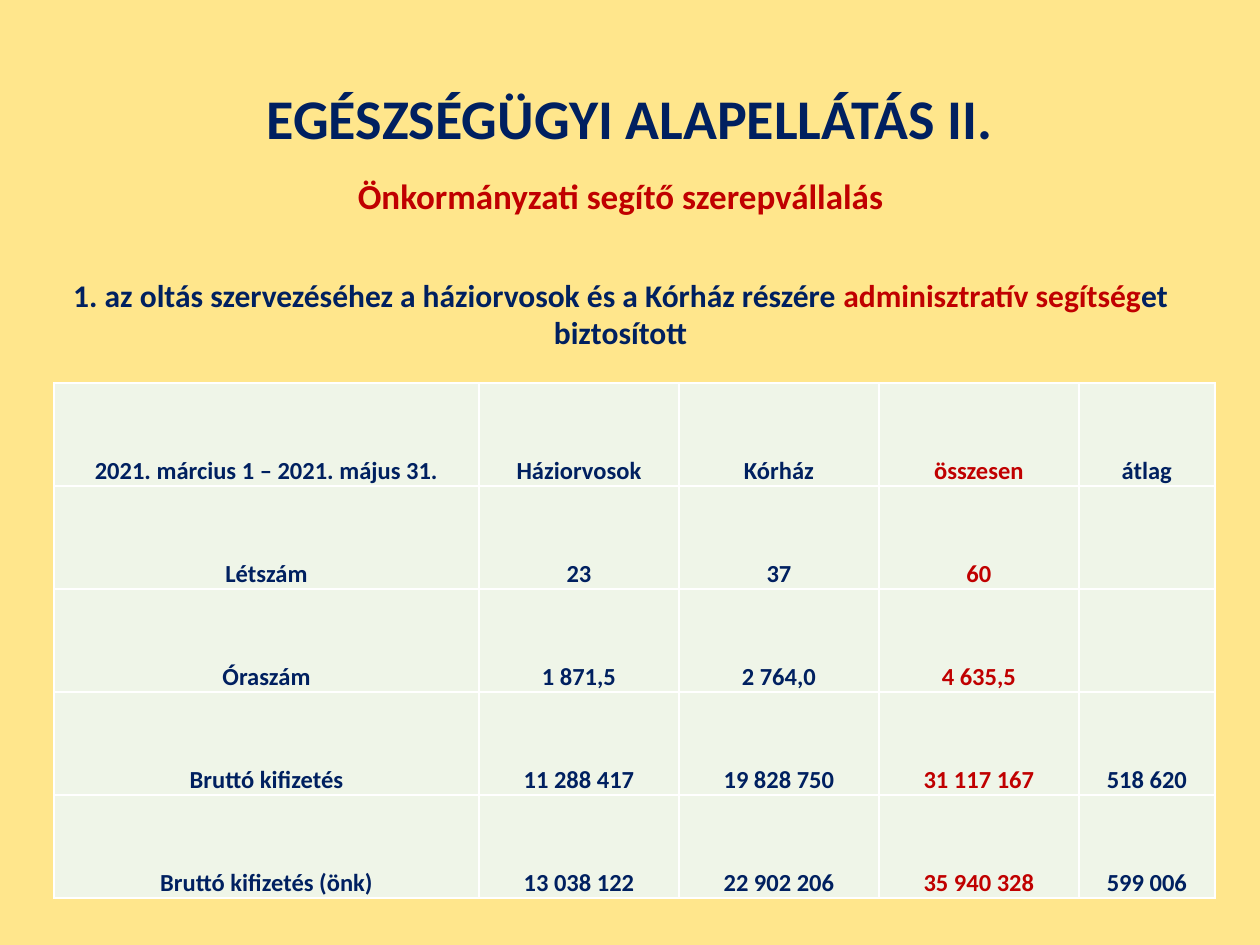
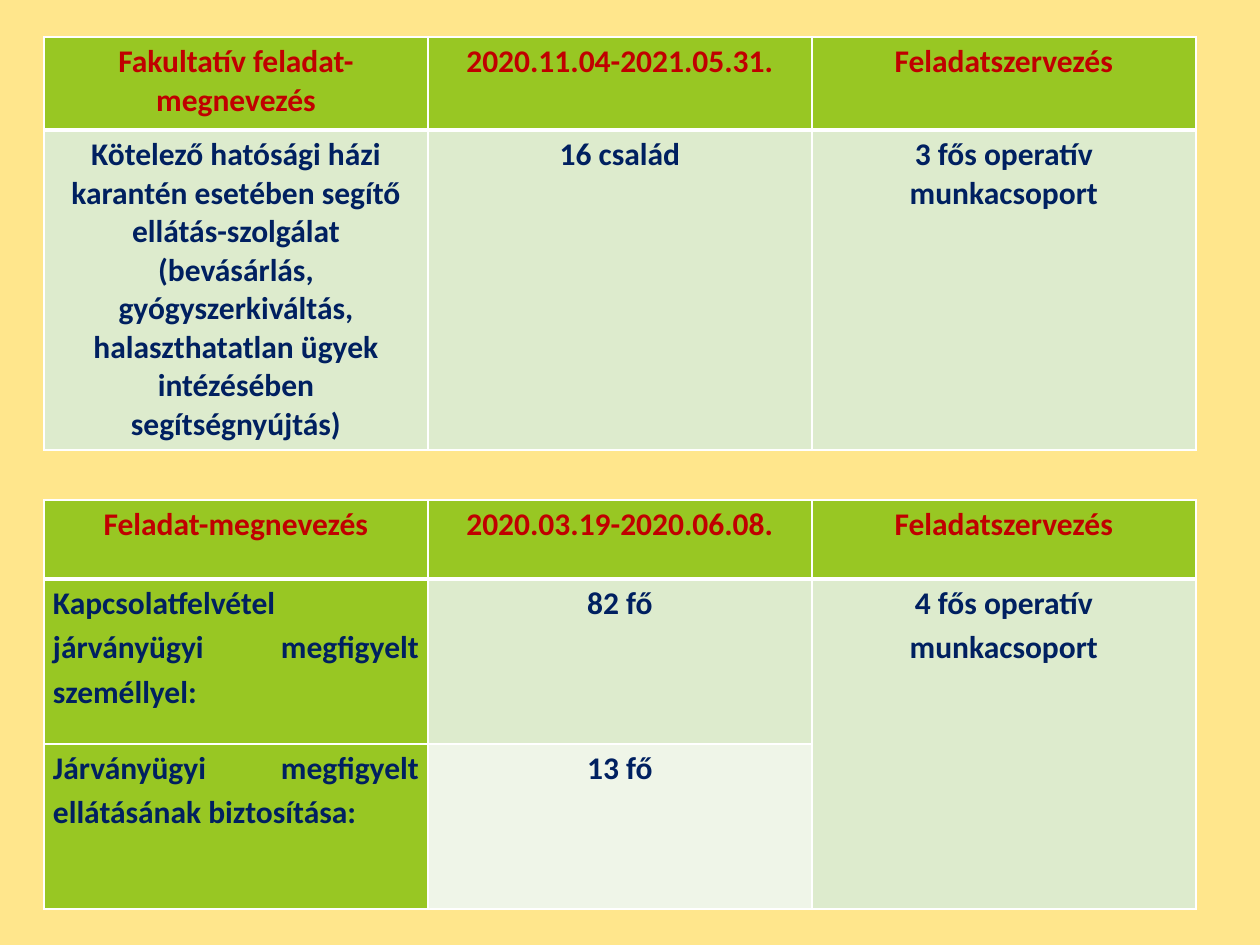
from lxml.etree import SubElement
from pptx import Presentation
from pptx.dml.color import RGBColor
from pptx.enum.text import MSO_ANCHOR, PP_ALIGN
from pptx.oxml.ns import qn
from pptx.util import Emu, Pt

NAVY, RED, WHITE = "002060", "C00000", "FFFFFF"
SAND, GREEN, LIGHT, PALE = "FFE68C", "98C723", "DDEBCD", "EFF5E8"
CENTER, JUSTIFY = PP_ALIGN.CENTER, PP_ALIGN.JUSTIFY


def px(length):
    return Emu(round(length * 914400 / 126))


def color(value):
    return RGBColor.from_string(value)


def apply(target, values):
    for name, value in values.items():
        setattr(target, name, value)


class Deck:
    font = "Calibri"

    def __init__(self):
        self.presentation = Presentation()
        apply(self.presentation, {"slide_width": px(1260), "slide_height": px(945)})
        self.slide = None

    def add_slide(self):
        self.slide = self.presentation.slides.add_slide(self.presentation.slide_layouts[6])
        fill = self.slide.background.fill
        fill.solid()
        fill.fore_color.rgb = color(SAND)

    def add_runs(self, paragraph, runs, size, **layout):
        apply(paragraph, {"alignment": CENTER, **layout})
        for text, text_color in runs:
            run = paragraph.add_run()
            run.text = text
            apply(run.font, {"name": self.font, "size": Pt(size), "bold": True})
            run.font.color.rgb = color(text_color)

    def text_box(self, left, top, width, height, paragraphs, anchor=MSO_ANCHOR.TOP):
        frame = self.slide.shapes.add_textbox(px(left), px(top), px(width), px(height)).text_frame
        apply(frame, {"word_wrap": True, "vertical_anchor": anchor})
        for index, (runs, size, space_before) in enumerate(paragraphs):
            paragraph = frame.add_paragraph() if index else frame.paragraphs[0]
            self.add_runs(paragraph, runs, size, space_before=Pt(space_before))

    def borders(self, cell, **widths):
        properties = cell._tc.get_or_add_tcPr()
        for side in "LRTB":
            line = SubElement(properties, qn(f"a:ln{side}"), w=str(Pt(widths.get(side, 1))))
            SubElement(SubElement(line, qn("a:solidFill")), qn("a:srgbClr"), val=WHITE)

    def table(self, left, top, columns, heights, rows, look, size, cell_format, header=False, **layout):
        table = self.slide.shapes.add_table(
            len(rows), len(columns), px(left), px(top), px(sum(columns)), px(sum(heights))).table
        apply(table, {"first_row": header, "horz_banding": False})
        for column, width in zip(table.columns, columns):
            column.width = px(width)
        for row, height in zip(table.rows, heights):
            row.height = px(height)
        for row_index, texts in enumerate(rows):
            for column_index, text in enumerate(texts):
                cell = table.cell(row_index, column_index)
                fill, text_color, alignment = look(row_index, column_index)
                thick = {0: {"B": 3}, 1: {"T": 3}}.get(row_index, {}) if header else {}
                self.borders(cell, **thick)
                cell.fill.solid()
                cell.fill.fore_color.rgb = color(fill)
                apply(cell, cell_format)
                if text:
                    self.add_runs(cell.text_frame.paragraphs[0], [(text, text_color)], size,
                                  alignment=alignment, **layout)
        return table


def payment_look(row, column):
    return PALE, RED if column == 3 else NAVY, CENTER


def quarantine_look(row, column):
    return (LIGHT, NAVY, CENTER) if row else (GREEN, RED, CENTER)


def contact_look(row, column):
    if row == 0:
        return GREEN, RED, CENTER
    if column == 0:
        return GREEN, NAVY, JUSTIFY
    return PALE if (row, column) == (2, 1) else LIGHT, NAVY, CENTER


def margins(side, vertical):
    return {"margin_left": px(side), "margin_right": px(side),
            "margin_top": px(vertical), "margin_bottom": px(vertical)}


def primary_care_slide(deck):
    deck.add_slide()
    deck.text_box(63, 21, 1134, 136, [([("EGÉSZSÉGÜGYI ALAPELLÁTÁS II.", NAVY)], 32, 0)],
                  MSO_ANCHOR.BOTTOM)
    deck.text_box(44, 168, 1153, 200, [
        ([("Önkormányzati segítő szerepvállalás", RED)], 20, 0),
        ([("1. az oltás szervezéséhez a háziorvosok és a Kórház részére ", NAVY),
          ("adminisztratív segítség", RED), ("et biztosított", NAVY)], 18, 34)])
    payments = [
        ["2021. március 1 – 2021. május 31.", "Háziorvosok", "Kórház", "összesen", "átlag"],
        ["Létszám", "23", "37", "60", ""],
        ["Óraszám", "1 871,5", "2 764,0", "4 635,5", ""],
        ["Bruttó kifizetés", "11 288 417", "19 828 750", "31 117 167", "518 620"],
        ["Bruttó kifizetés (önk)", "13 038 122", "22 902 206", "35 940 328", "599 006"]]
    deck.table(54, 383, [425, 200, 200, 200, 136], [103] * 5, payments, payment_look, 14,
               {"vertical_anchor": MSO_ANCHOR.BOTTOM, **margins(6, 0)},
               line_spacing=1.07, space_after=Pt(8))


def task_slide(deck):
    deck.add_slide()
    columns = [384] * 3
    contacts = [
        ["Feladat-megnevezés", "2020.03.19-2020.06.08.", "Feladatszervezés"],
        ["Kapcsolatfelvétel járványügyi megfigyelt személlyel:", "82 fő",
         "4 fős operatív munkacsoport"],
        ["Járványügyi megfigyelt ellátásának biztosítása:", "13 fő", ""]]
    contact_table = deck.table(44, 500, columns, [79, 165, 165], contacts, contact_look, 18,
                               margins(9, 0), header=True, line_spacing=1.15)
    contact_table.cell(1, 2).merge(contact_table.cell(2, 2))
    quarantine = [
        ["Fakultatív feladat-megnevezés", "2020.11.04-2021.05.31.", "Feladatszervezés"],
        ["Kötelező hatósági házi karantén esetében segítő ellátás-szolgálat (bevásárlás, "
         "gyógyszerkiváltás, halaszthatatlan ügyek intézésében segítségnyújtás)",
         "16 család", "3 fős operatív munkacsoport"]]
    deck.table(44, 37, columns, [93, 320], quarantine, quarantine_look, 18,
               margins(13, 6), header=True)


def main():
    deck = Deck()
    primary_care_slide(deck)
    task_slide(deck)
    deck.presentation.save("out.pptx")


if __name__ == "__main__":
    main()
